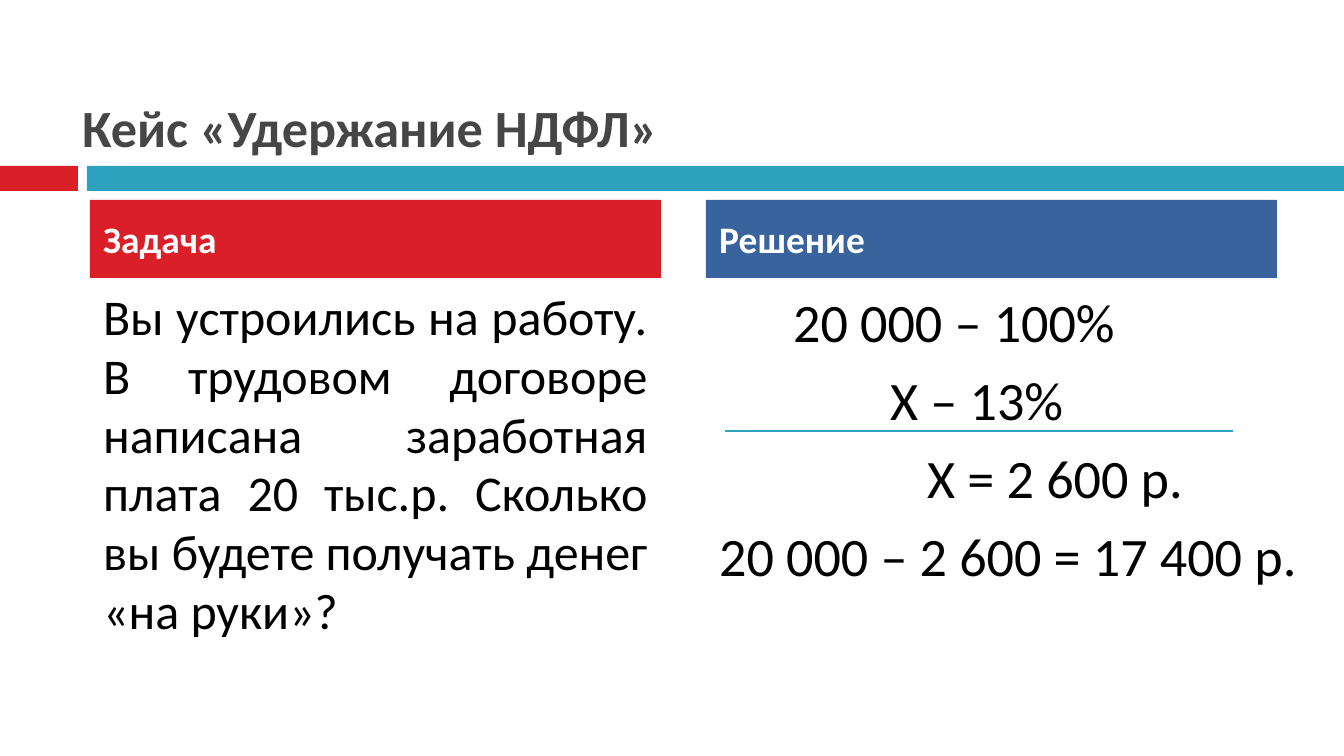
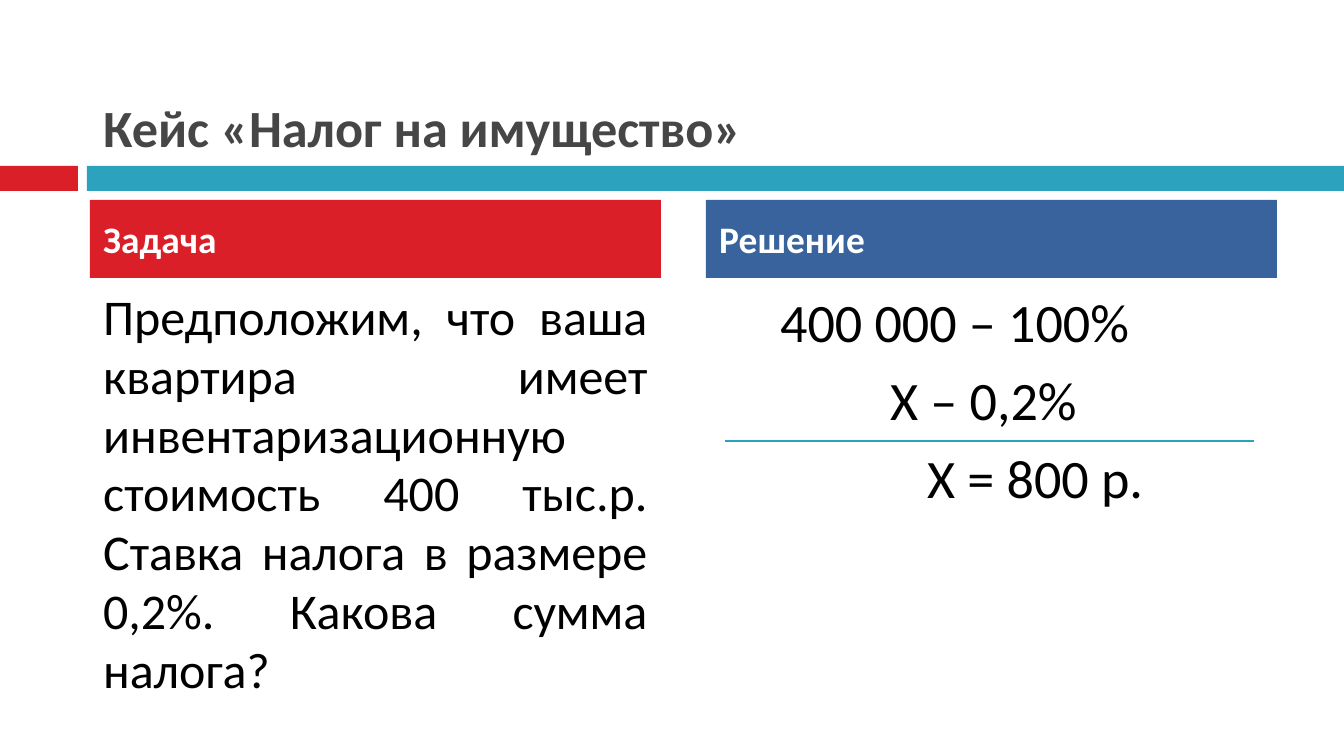
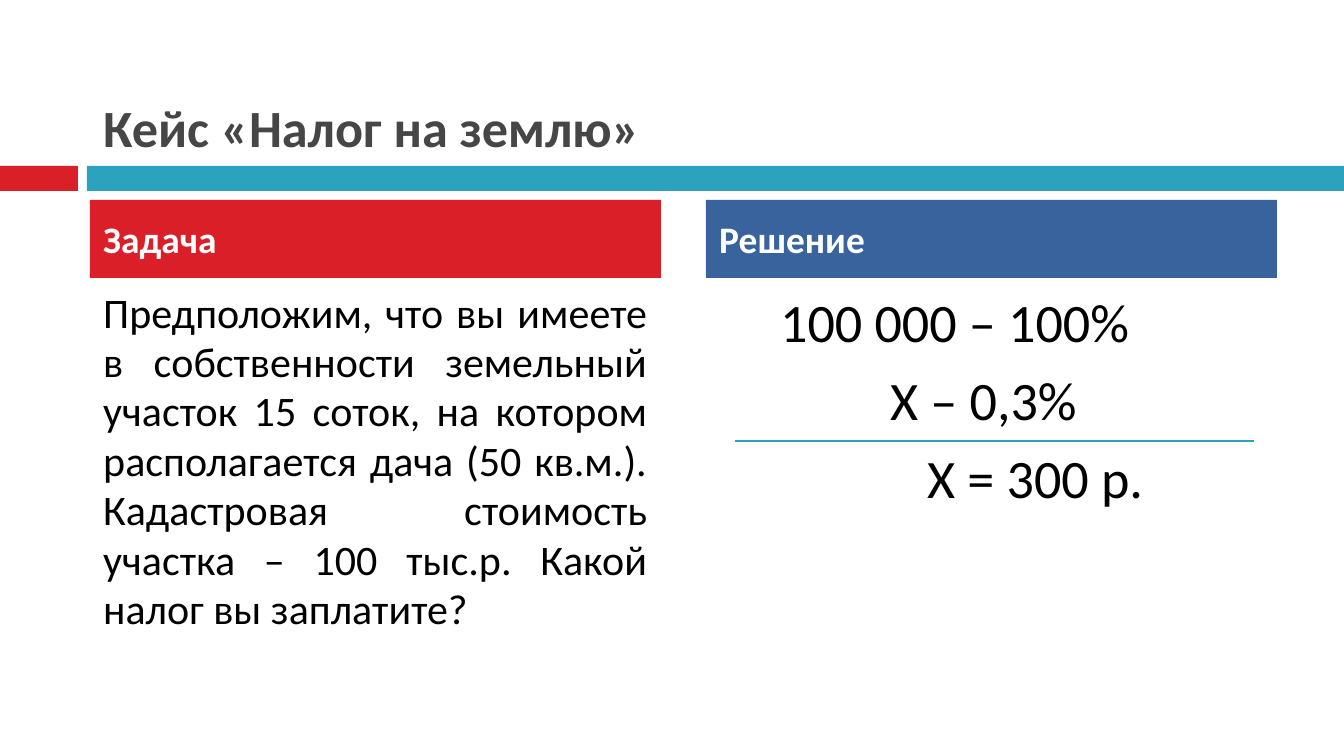
import pptx
import pptx.util
import pptx.dml.color
import pptx.enum.text
import pptx.enum.shapes
import pptx.oxml

PX = 6804
FONT = "Calibri"
RED, TEAL, BLUE = "DA1F28", "2DA2BF", "39639D"
GREY, BLACK, WHITE = "464646", "000000", "FFFFFF"
TOP, MID, LOW = (pptx.enum.text.MSO_ANCHOR.TOP, pptx.enum.text.MSO_ANCHOR.MIDDLE,
                 pptx.enum.text.MSO_ANCHOR.BOTTOM)
LEFT, FULL = pptx.enum.text.PP_ALIGN.LEFT, pptx.enum.text.PP_ALIGN.JUSTIFY
RECT = pptx.enum.shapes.MSO_SHAPE.RECTANGLE
LINE = pptx.enum.shapes.MSO_CONNECTOR.STRAIGHT


def hue(code):
    return pptx.dml.color.RGBColor.from_string(code)


def box(slide, spot, fill=None, rows=(), size=20, tint=WHITE, bold=False,
        hold=MID, side=LEFT, gap=7, lead=1.0):
    spot = [n * PX for n in spot]
    if fill:
        shape = slide.shapes.add_shape(RECT, *spot)
        shape.shadow.inherit = False
        shape.fill.solid()
        shape.fill.fore_color.rgb = hue(fill)
        shape.line.fill.background()
    else:
        shape = slide.shapes.add_textbox(*spot)
    frame = shape.text_frame
    frame.word_wrap = True
    frame.vertical_anchor = hold
    for i, (text, inset) in enumerate(rows):
        para = frame.add_paragraph() if i else frame.paragraphs[0]
        para.alignment = side
        para.space_before = pptx.util.Pt(gap)
        para.line_spacing = lead
        if inset:
            para._p.get_or_add_pPr().set("marL", str(inset * PX))
        run = para.add_run()
        run.text = text
        run.font.name = FONT
        run.font.size = pptx.util.Pt(size)
        run.font.bold = bold
        run.font.color.rgb = hue(tint)


cases = [
    {"title": "Кейс «Удержание НДФЛ»", "left": 69, "size": 26.8, "wide": 611,
     "task": "Вы устроились на работу. В трудовом договоре написана заработная "
             "плата 20 тыс.р. Сколько вы будете получать денег «на руки»?",
     "steps": [("20 000 – 100%", 74), ("X – 13%", 171), ("X = 2 600 р.", 208),
               ("20 000 – 2 600 = 17 400 р.", 0)],
     "rule": (725, 1233, 431)},
    {"title": "Кейс «Налог на имущество»", "left": 90, "size": 26.8, "wide": 571,
     "task": "Предположим, что ваша квартира имеет инвентаризационную стоимость "
             "400 тыс.р. Ставка налога в размере 0,2%. Какова сумма налога?",
     "steps": [("400 000 – 100%", 61), ("X – 0,2%", 171), ("X = 800 р.", 208)],
     "rule": (725, 1254, 441)},
    {"title": "Кейс «Налог на землю»", "left": 90, "size": 22.5, "wide": 571,
     "task": "Предположим, что вы имеете в собственности земельный участок 15 соток, "
             "на котором располагается дача (50 кв.м.). Кадастровая стоимость "
             "участка – 100 тыс.р. Какой налог вы заплатите?",
     "steps": [("100 000 – 100%", 61), ("X – 0,3%", 171), ("X = 300 р.", 208)],
     "rule": (735, 1254, 441)},
]

deck = pptx.Presentation()
deck.slide_width = 1344 * PX
deck.slide_height = 756 * PX

for case in cases:
    slide = deck.slides.add_slide(deck.slide_layouts[6])
    box(slide, (0, 166, 78, 25), RED)
    box(slide, (87, 166, 1257, 25), TEAL)
    left = case["left"]
    box(slide, (left, 17, 1289 - left, 148), rows=[(case["title"], 0)],
        size=28, tint=GREY, bold=True, hold=LOW, gap=0)
    box(slide, (90, 282, 571, 387), rows=[(case["task"], 0)],
        size=case["size"], tint=BLACK, hold=TOP, side=FULL, lead=0.98)
    box(slide, (706, 282, case["wide"], 387), rows=case["steps"],
        size=29, tint=BLACK, hold=TOP)
    for x, fill, head in [(90, RED, "Задача"), (706, BLUE, "Решение")]:
        box(slide, (x, 200, 571, 78), fill, [(head, 0)], bold=True)
    start, end, y = (n * PX for n in case["rule"])
    rule = slide.shapes.add_connector(LINE, start, y, end, y)
    rule.line.color.rgb = hue(TEAL)
    rule.line.width = pptx.util.Pt(0.79)
    rule._element.spPr.append(pptx.oxml.parse_xml(
        '<a:effectLst xmlns:a="http://schemas.openxmlformats.org/drawingml/2006/main"/>'))

deck.save("out.pptx")
